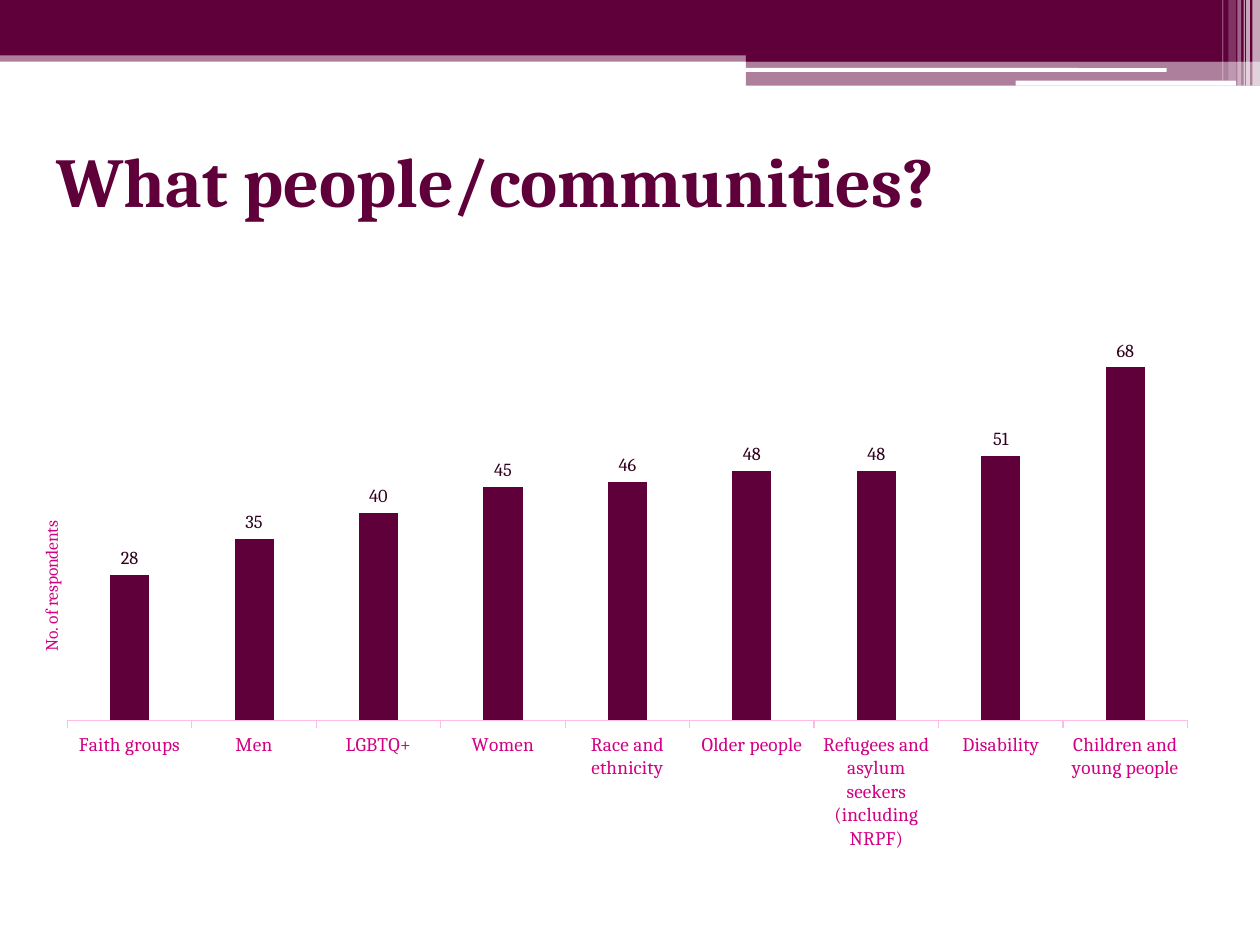
from pptx import Presentation
from pptx.chart.data import CategoryChartData
from pptx.dml.color import RGBColor
from pptx.enum.chart import XL_CHART_TYPE, XL_LABEL_POSITION, XL_TICK_MARK
from pptx.enum.shapes import MSO_SHAPE
from pptx.enum.text import MSO_ANCHOR, PP_ALIGN
from pptx.oxml.ns import qn
from pptx.util import Inches, Pt
from lxml import etree

PLUM = RGBColor(0x5F, 0x00, 0x3B)
DARK = RGBColor(0x30, 0x00, 0x1E)
MAGENTA = RGBColor(0xD2, 0x00, 0x83)
PINK = RGBColor(0xFF, 0xBA, 0xE5)
WHITE = RGBColor(0xFF, 0xFF, 0xFF)
FONT = "Cambria"


def style_font(font, size, color):
    font.name = FONT
    font.size = Pt(size)
    font.bold = False
    font.color.rgb = color


def set_layout(parent, **settings):
    """Place a chart part by fractions of the chart's size."""
    layout = parent.find(qn("c:layout"))
    if layout is None:
        layout = etree.Element(qn("c:layout"))
        parent.insert(0, layout)
    manual = etree.SubElement(layout, qn("c:manualLayout"))
    for name, value in settings.items():
        etree.SubElement(manual, qn(f"c:{name}")).set("val", str(value))


deck = Presentation()
deck.slide_width = Inches(10)
deck.slide_height = Inches(7.5)
page = deck.slides.add_slide(deck.slide_layouts[5])

# Header band: shape, left, top, width, height, colour, opacity in percent
RECT, ROUND = MSO_SHAPE.RECTANGLE, MSO_SHAPE.ROUNDED_RECTANGLE
header = [
    (RECT, 0, 0.4, 10, 0.09, PLUM, 50),
    (RECT, 0, 0, 10, 0.34, PLUM, 100),
    (RECT, 0, 0.34, 10, 0.1, PLUM, 100),
    (RECT, 5.92, 0.39, 4.08, 0.1, PLUM, 100),
    (RECT, 5.92, 0.48, 4.08, 0.2, PLUM, 50),
    (ROUND, 5.91, 0.54, 3.35, 0.03, WHITE, 100),
    (ROUND, 8.06, 0.64, 1.75, 0.04, WHITE, 100),
    (RECT, 9.94, 0, 0.06, 0.68, WHITE, 65),
    (RECT, 9.89, 0, 0.03, 0.68, WHITE, 65),
    (RECT, 9.87, 0, 0.01, 0.68, WHITE, 60),
    (RECT, 9.82, 0, 0.03, 0.68, WHITE, 40),
    (RECT, 9.75, 0, 0.06, 0.64, WHITE, 20),
    (RECT, 9.7, 0, 0.01, 0.64, WHITE, 30),
]
for kind, left, top, width, height, color, opacity in header:
    band = page.shapes.add_shape(
        kind, Inches(left), Inches(top), Inches(width), Inches(height))
    band.shadow.inherit = False
    band.line.fill.background()
    band.fill.solid()
    band.fill.fore_color.rgb = color
    if opacity < 100:
        shade = band.fill._xPr.find(".//" + qn("a:srgbClr"))
        etree.SubElement(shade, qn("a:alpha")).set("val", str(opacity * 1000))

# Title
title = page.shapes.title
title.left, title.top = Inches(0.35), Inches(0.84)
title.width, title.height = Inches(9), Inches(1.17)
title.text_frame.word_wrap = True
title.text_frame.vertical_anchor = MSO_ANCHOR.MIDDLE
para = title.text_frame.paragraphs[0]
para.alignment = PP_ALIGN.LEFT
span = para.add_run()
span.text = "What people/communities?"
style_font(span.font, 40, PLUM)
span.font.bold = True

# Chart
respondents = {
    "Faith groups": 28,
    "Men": 35,
    "LGBTQ+": 40,
    "Women": 45,
    "Race and ethnicity": 46,
    "Older people": 48,
    "Refugees and asylum seekers (including NRPF)": 48,
    "Disability": 51,
    "Children and young people": 68,
}
data = CategoryChartData()
data.categories = list(respondents)
data.add_series("Series 1", list(respondents.values()))
chart = page.shapes.add_chart(
    XL_CHART_TYPE.COLUMN_CLUSTERED,
    Inches(0.2), Inches(2.25), Inches(9.3), Inches(4.77), data).chart
style_font(chart.font, 10, DARK)
chart.has_legend = False
chart.has_title = False

plot = chart.plots[0]
plot.vary_by_categories = False
plot.gap_width = 219
plot.overlap = -27
columns = plot.series[0]
columns.format.fill.solid()
columns.format.fill.fore_color.rgb = PLUM
labels = columns.data_labels
labels.show_value = True
labels.position = XL_LABEL_POSITION.OUTSIDE_END
style_font(labels.font, 10.5, DARK)

categories = chart.category_axis
categories.has_major_gridlines = False
categories.major_tick_mark = XL_TICK_MARK.OUTSIDE
categories.format.line.color.rgb = PINK
categories.format.line.width = Pt(0.75)
style_font(categories.tick_labels.font, 11, MAGENTA)

values = chart.value_axis
values.minimum_scale = 0
values.maximum_scale = 80
values.has_major_gridlines = False
values.visible = False
caption = values.axis_title
span = caption.text_frame.paragraphs[0].add_run()
span.text = "No. of respondents"
style_font(span.font, 10, MAGENTA)
turned = caption._element.find(".//" + qn("a:bodyPr"))
turned.set("rot", "-5400000")
turned.set("vert", "horz")

set_layout(caption._element, xMode="edge", yMode="edge", x=0.01, y=0.39)
set_layout(chart._chartSpace.find(".//" + qn("c:plotArea")),
           layoutTarget="inner", xMode="edge", yMode="edge",
           x=0.036, y=0.036, w=0.956, h=0.691)

deck.save("out.pptx")
